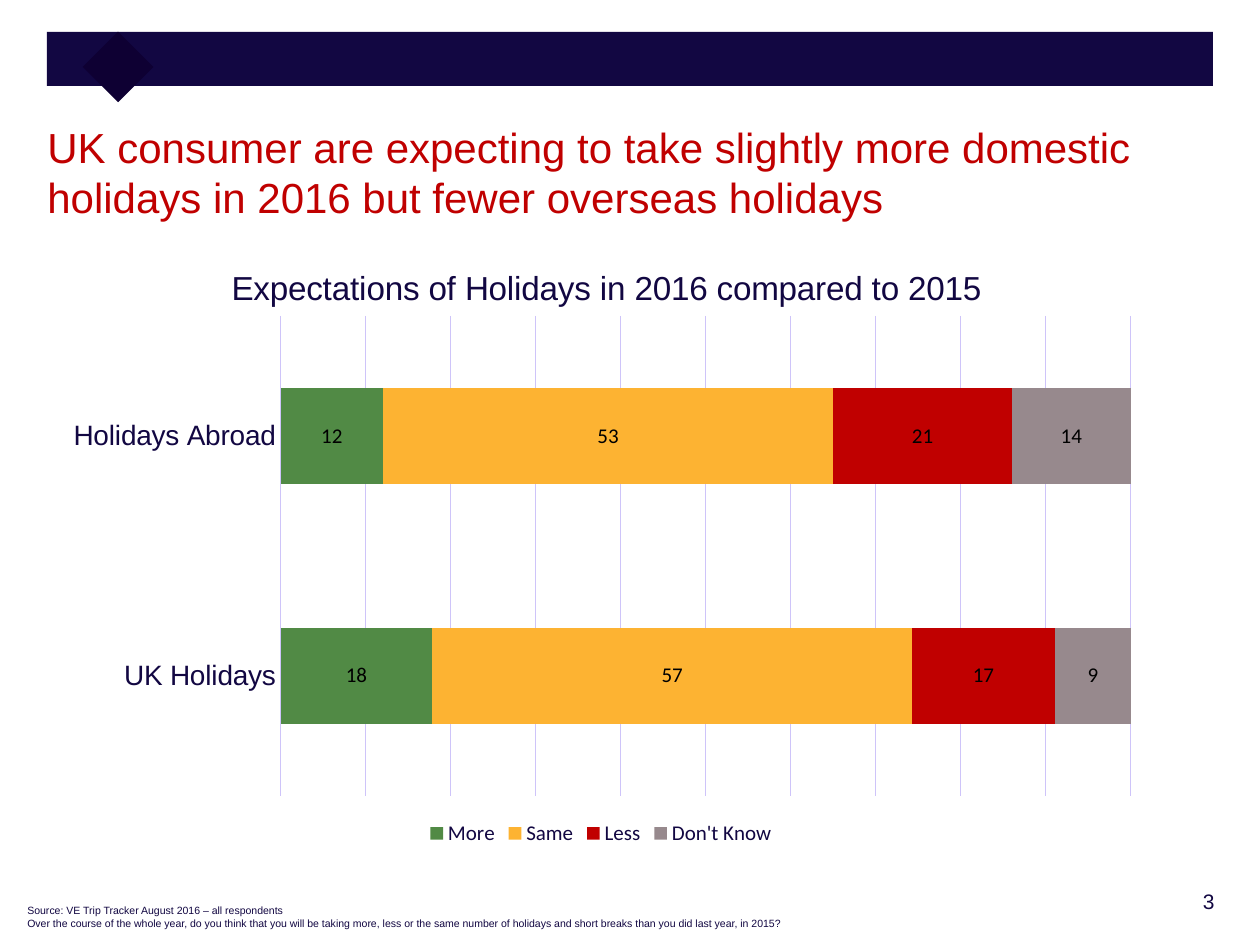
from lxml import etree
from pptx import Presentation
from pptx import util as u
from pptx.chart.data import CategoryChartData
from pptx.dml.color import RGBColor
from pptx.enum import chart as ch, shapes, text
from pptx.oxml import parse_xml
from pptx.oxml.ns import nsdecls

NAVY = RGBColor(0x12, 0x07, 0x42)
DARK = RGBColor(0x0E, 0x00, 0x33)
RED = RGBColor(0xC0, 0x00, 0x00)
GREEN = RGBColor(0x51, 0x8A, 0x45)
AMBER = RGBColor(0xFD, 0xB3, 0x32)
GREY = RGBColor(0x97, 0x89, 0x8D)
LILAC = RGBColor(0xCE, 0xC4, 0xF9)
BLACK = RGBColor(0, 0, 0)

CATEGORIES = ["UK Holidays", "Holidays Abroad"]
ANSWERS = [
    ("More", (18, 12), GREEN),
    ("Same", (57, 53), AMBER),
    ("Less", (17, 21), RED),
    ("Don't Know", (9, 14), GREY),
]


def px(length):
    return u.Emu(round(length * 914400 / 126))


def style(font, size, color, name="Arial"):
    font.size = u.Pt(size)
    font.bold = False
    font.name = name
    font.color.rgb = color


def add_text(page, place, lines, size, color, align=text.PP_ALIGN.LEFT,
             anchor=text.MSO_ANCHOR.TOP):
    frame = page.shapes.add_textbox(*map(px, place)).text_frame
    frame.word_wrap = True
    frame.vertical_anchor = anchor
    frame.text = "\n".join(lines)
    for para in frame.paragraphs:
        para.alignment = align
        for run in para.runs:
            style(run.font, size, color)


def add_block(page, place, color, rotation=0):
    block = page.shapes.add_shape(shapes.MSO_SHAPE.RECTANGLE, *map(px, place))
    block.shadow.inherit = False
    block.fill.solid()
    block.fill.fore_color.rgb = color
    block.line.fill.background()
    block.rotation = rotation


def manual_layout(parent, after, **values):
    """Fix a chart part's position, as fractions of the chart."""
    old = parent.find(after.tag.split("}")[0] + "}layout")
    if old is not None:
        parent.remove(old)
    layout = parse_xml(f"<c:layout {nsdecls('c')}><c:manualLayout/></c:layout>")
    for tag, value in values.items():
        etree.SubElement(layout[0], layout.tag.replace("layout", tag)).set("val", str(value))
    after.addnext(layout)


def add_chart(page, place):
    data = CategoryChartData()
    data.categories = CATEGORIES
    for name, values, _ in ANSWERS:
        data.add_series(name, values)
    chart = page.shapes.add_chart(
        ch.XL_CHART_TYPE.BAR_STACKED_100, *map(px, place), data).chart
    style(chart.font, 10, NAVY, "Calibri")

    # Title
    title = chart.chart_title
    title.text_frame.text = "Expectations of Holidays in 2016 compared to 2015"
    style(title.text_frame.paragraphs[0].runs[0].font, 19, NAVY)
    title.include_in_layout = False
    title_xml = title._element
    manual_layout(title_xml, title_xml[0], xMode="edge", yMode="edge", x=0.16, y=0.04)

    # Legend
    chart.has_legend = True
    chart.legend.position = ch.XL_LEGEND_POSITION.BOTTOM
    chart.legend.include_in_layout = False
    style(chart.legend.font, 12, NAVY, "Calibri")

    # Axes
    names = chart.category_axis
    names.major_tick_mark = ch.XL_TICK_MARK.NONE
    names.format.line.color.rgb = LILAC
    names.format.line.width = u.Pt(0.75)
    style(names.tick_labels.font, 16, NAVY)
    scale = chart.value_axis
    scale.minimum_scale, scale.maximum_scale, scale.major_unit = 0, 1, 0.1
    scale.has_major_gridlines = True
    scale.major_gridlines.format.line.color.rgb = LILAC
    scale.major_gridlines.format.line.width = u.Pt(0.75)
    scale.visible = False

    # Bars
    plot = chart.plots[0]
    plot.gap_width, plot.overlap = 150, 100
    plot.vary_by_categories = False
    for series, (_, _, color) in zip(plot.series, ANSWERS):
        series.format.fill.solid()
        series.format.fill.fore_color.rgb = color
        labels = series.data_labels
        labels.show_value = True
        style(labels.font, 12, BLACK, "Calibri")

    area = chart._chartSpace.chart.plotArea
    bars = plot._element
    for old in area.findall(bars.tag.replace("barChart", "layout")):
        area.remove(old)
    manual_layout(area, bars, layoutTarget="inner", xMode="edge", yMode="edge",
                  x=0.21, y=0.13, w=0.77, h=0.78)
    area.insert(0, bars.getnext())


def main():
    deck = Presentation()
    deck.slide_width, deck.slide_height = px(1260), px(945)
    page = deck.slides.add_slide(deck.slide_layouts[6])

    # Banner
    add_block(page, (47, 32, 1166, 54), NAVY)
    add_block(page, (93, 42, 50, 50), DARK, rotation=45)

    # Heading and chart
    add_text(page, (35, 116, 1208, 112),
             ["UK consumer are expecting to take slightly more domestic "
              "holidays in 2016 but fewer overseas holidays"],
             24, RED, anchor=text.MSO_ANCHOR.MIDDLE)
    add_chart(page, (49, 236, 1104, 615))

    # Footer
    add_text(page, (1075, 882, 152, 45), ["3"], 12, NAVY, text.PP_ALIGN.RIGHT)
    add_text(page, (15, 898, 1187, 38),
             ["Source: VE Trip Tracker August 2016 – all respondents",
              "Over the course of the whole year, do you think that you will be "
              "taking more, less or the same number of holidays and short breaks "
              "than you did last year, in 2015?"], 6, NAVY)
    deck.save("out.pptx")


if __name__ == "__main__":
    main()
